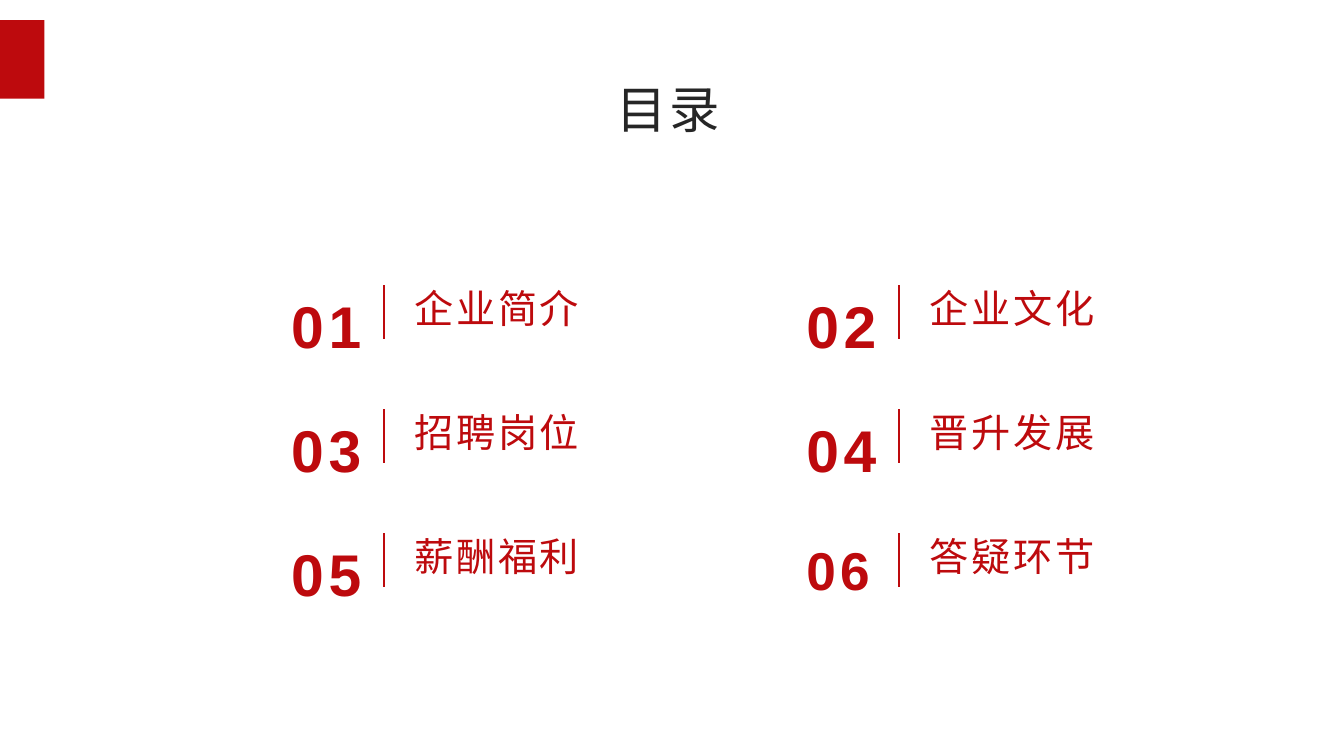
from lxml import etree
from pptx import Presentation
from pptx.dml.color import RGBColor
from pptx.enum.lang import MSO_LANGUAGE_ID as Lang
from pptx.enum.shapes import MSO_CONNECTOR as Connector, MSO_SHAPE as Shape
from pptx.enum.text import MSO_ANCHOR as Anchor, MSO_AUTO_SIZE as AutoSize, PP_ALIGN as Align
from pptx.oxml.ns import qn
from pptx.util import Cm, Pt

RED = RGBColor(0xBD, 0x0A, 0x0D)
DARK = RGBColor(0x26, 0x26, 0x26)

TOPICS = ["企业简介", "企业文化", "招聘岗位", "晋升发展", "薪酬福利", "答疑环节"]
COLUMNS = 2
LEFT, TOP = 7.09, 7.0
COLUMN_STEP, ROW_STEP = 12.98, 3.125

NUMBER = {"size": Pt(42), "bold": True}
LAST_NUMBER = {"size": Pt(38), "bold": True}
LABEL = {"size": Pt(28), "bold": False}
TITLE = {"size": Pt(36), "bold": False}


def write(box, text, formats, color, spacing, anchor=Anchor.TOP, wrap=True):
    """Fill a box with one line; spacing is the letter spacing in points."""
    frame = box.text_frame
    frame.word_wrap = wrap
    frame.auto_size = AutoSize.NONE
    frame.vertical_anchor = anchor
    para = frame.paragraphs[0]
    para.alignment = Align.LEFT
    span = para.add_run()
    span.text = text
    for name, value in formats.items():
        setattr(span.font, name, value)
    span.font.name = "Arial"
    span.font.language_id = Lang.SIMPLIFIED_CHINESE
    span.font.color.rgb = color
    span.font._element.set("spc", str(round(spacing * 100)))
    return para


def add_title(page):
    title = page.shapes.title
    title.left, title.top, title.width, title.height = Cm(15.27), Cm(1.83), Cm(3.33), Cm(1.96)
    para = write(title, "目录", TITLE, DARK, 2, wrap=False)
    para.line_spacing = 1.0


def add_corner_block(page):
    block = page.shapes.add_shape(Shape.RECTANGLE, 0, Cm(0.51), Cm(1.12), Cm(1.98))
    block.shadow.inherit = False
    block.fill.solid()
    block.fill.fore_color.rgb = RED
    block.line.fill.background()


def add_divider(page, x, y):
    divider = page.shapes.add_connector(Connector.STRAIGHT, Cm(x), Cm(y), Cm(x), Cm(y + 1.35))
    divider.line.color.rgb = RED
    divider.line.width = Pt(1)
    etree.SubElement(divider._element.spPr, qn("a:effectLst"))


def add_entry(page, index, topic):
    row, column = divmod(index, COLUMNS)
    x, y = LEFT + column * COLUMN_STEP, TOP + row * ROW_STEP
    is_last = index == len(TOPICS) - 1

    number = page.shapes.add_textbox(Cm(x), Cm(y), Cm(2.29 if is_last else 2.41), Cm(2.31))
    para = write(number, f"{index + 1:02}", LAST_NUMBER if is_last else NUMBER,
                 RED, 3 if is_last else 3.4)
    para.line_spacing = 1.1
    para.space_after = Pt(8)

    add_divider(page, x + 2.59, y + 0.19)

    label = page.shapes.add_textbox(Cm(x + 3.1), Cm(y - 0.02), Cm(7.37), Cm(1.57))
    para = write(label, topic, LABEL, RED, 2, Anchor.MIDDLE)
    para.space_after = Pt(8)


def main():
    deck = Presentation()
    deck.slide_width, deck.slide_height = Cm(33.87), Cm(19.05)
    page = deck.slides.add_slide(deck.slide_layouts[5])
    add_corner_block(page)
    add_title(page)
    for index, topic in enumerate(TOPICS):
        add_entry(page, index, topic)
    deck.save("out.pptx")


if __name__ == "__main__":
    main()
